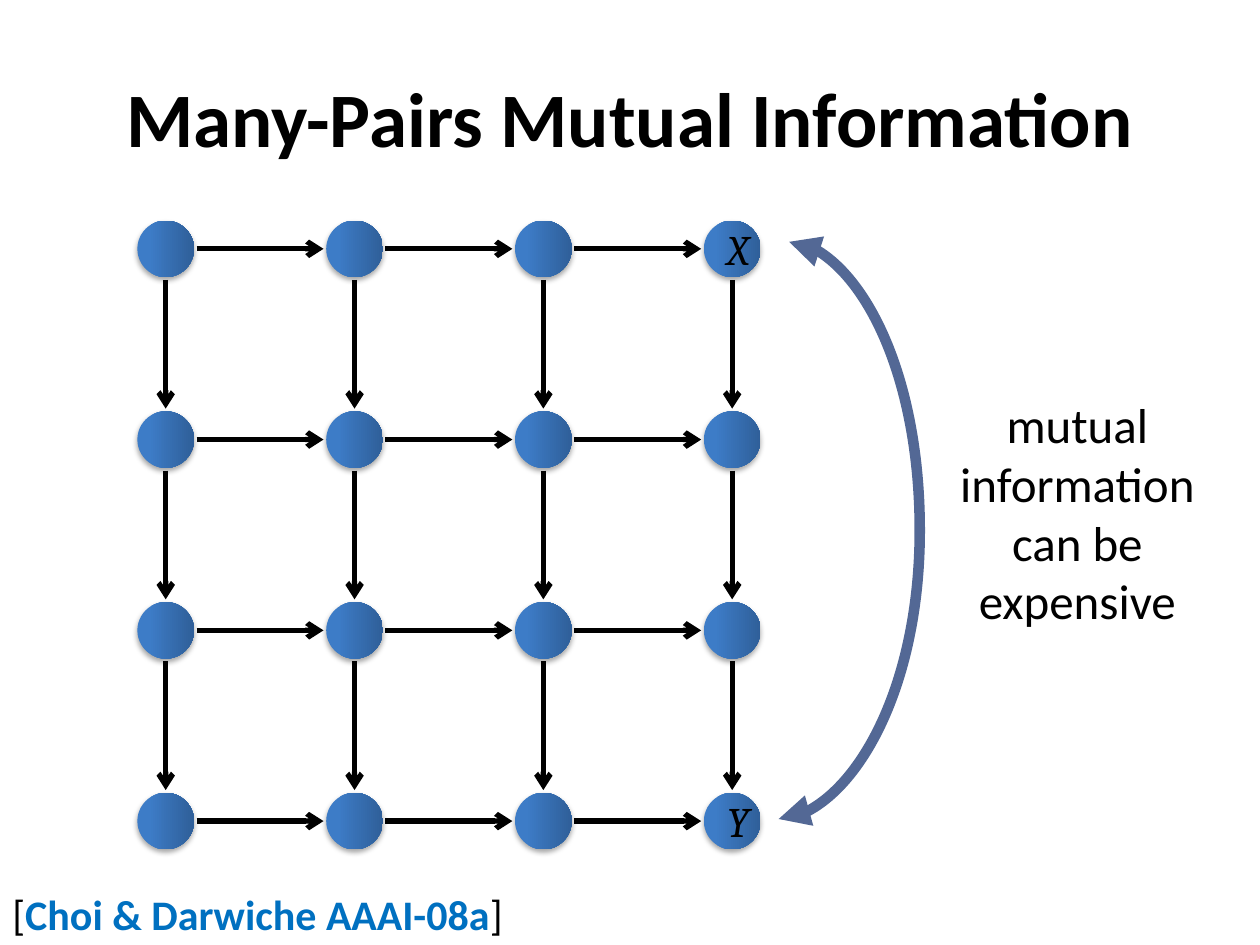
from lxml import etree
from pptx import Presentation
from pptx.dml.color import RGBColor
from pptx.enum.shapes import MSO_CONNECTOR, MSO_SHAPE
from pptx.enum.text import MSO_ANCHOR, PP_ALIGN
from pptx.oxml.ns import qn
from pptx.util import Pt

STRAIGHT, CURVE = MSO_CONNECTOR.STRAIGHT, MSO_CONNECTOR.CURVE
OVAL = MSO_SHAPE.OVAL
MIDDLE, TOP = MSO_ANCHOR.MIDDLE, MSO_ANCHOR.TOP
CENTER, LEFT = PP_ALIGN.CENTER, PP_ALIGN.LEFT

SIZE = 4
X0, Y0 = 94.7, 142.2
DX, DY = 107.9, 109
DIAMETER = 32.4
GAP = 17.7
LABELS = {(0, 3): "X", (3, 3): "Y"}


def color(value):
    return RGBColor.from_string(value)


def set_attrs(obj, values):
    for name, value in values.items():
        setattr(obj, name, value)


def write(shape, runs, align=CENTER, **frame):
    tf = shape.text_frame
    set_attrs(tf, {"word_wrap": False, "vertical_anchor": TOP, **frame})
    p = tf.paragraphs[0]
    p.alignment = align
    for text, rgb, font in runs:
        for i, line in enumerate(text.split("\n")):
            if i:
                p.add_line_break()
            r = p.add_run()
            r.text = line
            set_attrs(r.font, {"name": "Calibri", **font})
            r.font.color.rgb = color(rgb)


def add_text(s, box, runs, **options):
    sp = s.shapes.add_textbox(*map(Pt, box))
    write(sp, runs, **options)


def add_shadow(sp):
    sp.shadow.inherit = False
    effects = sp._element.spPr.find(qn("a:effectLst"))
    shadow = etree.SubElement(effects, qn("a:outerShdw"), blurRad="39400",
                              dist="22900", dir="5400000", rotWithShape="0")
    rgb = etree.SubElement(shadow, qn("a:srgbClr"), val="000000")
    etree.SubElement(rgb, qn("a:alpha"), val="35000")


def add_node(s, x, y, label):
    box = (x - DIAMETER / 2, y - DIAMETER / 2, DIAMETER, DIAMETER)
    sp = s.shapes.add_shape(OVAL, *map(Pt, box))
    sp.fill.gradient()
    sp.fill.gradient_angle = 0
    stops = ((0.2, "3D7CC7"), (1, "2F5F99"))
    for stop, (position, rgb) in zip(sp.fill.gradient_stops, stops):
        stop.position = position
        stop.color.rgb = color(rgb)
    sp.line.fill.background()
    add_shadow(sp)
    if label:
        font = {"name": "Cambria", "size": Pt(24), "italic": True}
        write(sp, [(label, "000000", font)], vertical_anchor=MIDDLE,
              margin_left=Pt(7), margin_right=0, margin_top=0, margin_bottom=0)


def add_arrow(s, kind, start, end, rgb, width, **heads):
    line = s.shapes.add_connector(kind, *map(Pt, start + end))
    line.line.color.rgb = color(rgb)
    line.line.width = Pt(width)
    ln = line.line._get_or_add_ln()
    for tag, head in heads.items():
        etree.SubElement(ln, qn(f"a:{tag}"), type=head)
    etree.SubElement(line._element.spPr, qn("a:effectLst"))
    return line


def add_grid(s):
    for row in range(SIZE):
        for col in range(SIZE):
            x, y = X0 + col * DX, Y0 + row * DY
            add_node(s, x, y, LABELS.get((row, col)))
            if col < SIZE - 1:
                add_arrow(s, STRAIGHT, (x + GAP, y), (x + DX - GAP, y),
                          "000000", 3, tailEnd="arrow")
            if row < SIZE - 1:
                add_arrow(s, STRAIGHT, (x, y + GAP), (x, y + DY - GAP),
                          "000000", 3, tailEnd="arrow")


def add_bow(s):
    line = add_arrow(s, CURVE, (451, 138.2), (445, 468), "536895", 6,
                     headEnd="triangle", tailEnd="triangle")
    guides = line._element.spPr.find(qn("a:prstGeom")).get_or_add_avLst()
    etree.SubElement(guides, qn("a:gd"), name="adj1", fmla="val -1241700")


def main():
    prs = Presentation()
    prs.slide_width, prs.slide_height = Pt(720), Pt(540)
    s = prs.slides.add_slide(prs.slide_layouts[6])
    add_text(s, (36, 21.6, 648, 90),
             [("Many-Pairs Mutual Information", "000000",
               {"size": Pt(44), "bold": True})],
             vertical_anchor=MIDDLE, word_wrap=True)
    add_grid(s)
    add_text(s, (540.7, 221.8, 149.8, 143.3),
             [("mutual\ninformation\ncan be\nexpensive", "000000",
               {"size": Pt(28)})])
    add_bow(s)
    add_text(s, (0, 504, 297.4, 36),
             [("[", "000000", {"size": Pt(24)}),
              ("Choi & Darwiche AAAI-08a", "0070C0",
               {"size": Pt(24), "bold": True}),
              ("]", "000000", {"size": Pt(24)})], align=LEFT)
    prs.save("out.pptx")


if __name__ == "__main__":
    main()
